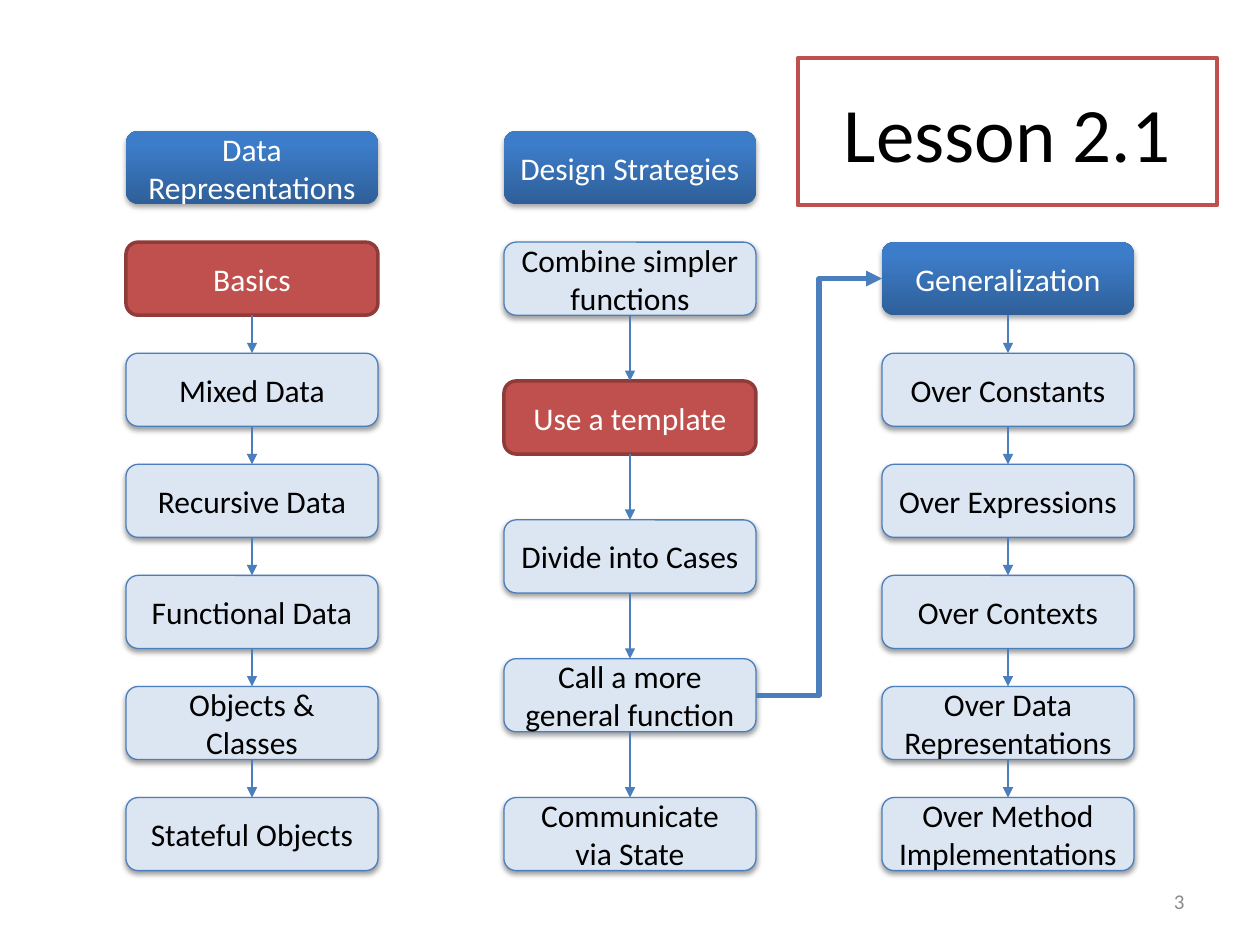
from dataclasses import dataclass

from pptx import Presentation
from pptx.dml.color import RGBColor
from pptx.enum.shapes import MSO_CONNECTOR, MSO_SHAPE
from pptx.enum.text import MSO_ANCHOR, PP_ALIGN
from pptx.oxml.ns import qn
from pptx.oxml.xmlchemy import OxmlElement
from pptx.util import Inches, Pt

ROUNDED = MSO_SHAPE.ROUNDED_RECTANGLE
STRAIGHT, ELBOW = MSO_CONNECTOR.STRAIGHT, MSO_CONNECTOR.ELBOW
CENTER, RIGHT = PP_ALIGN.CENTER, PP_ALIGN.RIGHT
MIDDLE = MSO_ANCHOR.MIDDLE
SITE_TOP, SITE_LEFT, SITE_BOTTOM, SITE_RIGHT = range(4)

WHITE = RGBColor(0xFF, 0xFF, 0xFF)
BLACK = RGBColor(0x00, 0x00, 0x00)
GRAY = RGBColor(0x8C, 0x8C, 0x8C)
BLUE = RGBColor(0x4B, 0x7E, 0xBC)
PALE_BLUE = RGBColor(0xDC, 0xE6, 0xF2)
HEADER_DARK = RGBColor(0x2F, 0x5F, 0x99)
HEADER_LIGHT = RGBColor(0x3C, 0x7C, 0xC8)
RED = RGBColor(0xC0, 0x50, 0x4D)
DARK_RED = RGBColor(0x8E, 0x3B, 0x39)

# Grid in inches: boxes sit in rows 0 to 6
FIRST_TOP, LAST_TOP, LAST_ROW = 1.04, 6.33, 6
ROW_PITCH = (LAST_TOP - FIRST_TOP) / LAST_ROW
BOX_WIDTH, BOX_HEIGHT = 2, 0.58


@dataclass(frozen=True)
class Topic:
    text: str
    style: str = "plain"


@dataclass(frozen=True)
class Column:
    left: float
    header: str
    header_row: int
    first_row: int
    topics: tuple[Topic, ...]
    header_linked: bool = False


COLUMNS = (
    Column(1, "Data Representations", 0, 1, (
        Topic("Basics", "current"), Topic("Mixed Data"),
        Topic("Recursive Data"), Topic("Functional Data"),
        Topic("Objects & Classes"), Topic("Stateful Objects"))),
    Column(4, "Design Strategies", 0, 1, (
        Topic("Combine simpler functions"),
        Topic("Use a template", "current"), Topic("Divide into Cases"),
        Topic("Call a more general function"),
        Topic("Communicate via State"))),
    Column(7, "Generalization", 1, 2, (
        Topic("Over Constants"), Topic("Over Expressions"),
        Topic("Over Contexts"), Topic("Over Data Representations"),
        Topic("Over Method Implementations")), header_linked=True),
)


def write_text(box, text: str, *, size: float = 18, color=BLACK, align=CENTER) -> None:
    frame = box.text_frame
    frame.word_wrap = True
    frame.vertical_anchor = MIDDLE
    para = frame.paragraphs[0]
    para.alignment = align
    span = para.add_run()
    span.text = text
    span.font.name = "Calibri"
    span.font.size = Pt(size)
    span.font.color.rgb = color


def set_line(target, color: RGBColor, width: float) -> None:
    target.line.color.rgb = color
    target.line.width = Pt(width)


def add_shadow(box, opacity: int) -> None:
    shadow = OxmlElement("a:outerShdw")
    for name, value in (("blurRad", Pt(3.1)), ("dist", Pt(1.7)),
                        ("dir", 90 * 60000), ("rotWithShape", 0)):
        shadow.set(name, str(value))
    color = OxmlElement("a:srgbClr")
    color.set("val", str(BLACK))
    alpha = OxmlElement("a:alpha")
    alpha.set("val", str(opacity * 1000))
    color.append(alpha)
    shadow.append(color)
    box._element.spPr.find(qn("a:effectLst")).append(shadow)


def add_box(page, topic: Topic, left: float, row: float):
    box = page.shapes.add_shape(
        ROUNDED, Inches(left), Inches(FIRST_TOP + row * ROW_PITCH),
        Inches(BOX_WIDTH), Inches(BOX_HEIGHT))
    box.shadow.inherit = False
    if topic.style == "header":
        box.fill.gradient()
        box.fill.gradient_angle = 90
        stops = zip(box.fill.gradient_stops, (0, 0.8), (HEADER_DARK, HEADER_LIGHT))
        for stop, position, color in stops:
            stop.position = position
            stop.color.rgb = color
        box.line.fill.background()
        add_shadow(box, 35)
    else:
        current = topic.style == "current"
        box.fill.solid()
        box.fill.fore_color.rgb = RED if current else PALE_BLUE
        set_line(box, DARK_RED if current else BLUE, 2 if current else 0.75)
        if not current:
            add_shadow(box, 38)
    write_text(box, topic.text, color=BLACK if topic.style == "plain" else WHITE)
    return box


def add_arrow(page, start, start_site: int, end, end_site: int, *,
              kind=STRAIGHT, width: float = 0.75) -> None:
    arrow = page.shapes.add_connector(kind, 0, 0, 0, 0)
    arrow.begin_connect(start, start_site)
    arrow.end_connect(end, end_site)
    set_line(arrow, BLUE, width)
    head = OxmlElement("a:tailEnd")
    head.set("type", "triangle")
    arrow.line._get_or_add_ln().append(head)
    arrow._element.spPr.append(OxmlElement("a:effectLst"))


def add_column(page, column: Column) -> dict:
    header = add_box(page, Topic(column.header, "header"), column.left, column.header_row)
    step = (LAST_ROW - column.first_row) / (len(column.topics) - 1)
    boxes = [add_box(page, topic, column.left, column.first_row + index * step)
             for index, topic in enumerate(column.topics)]
    chain = [header, *boxes] if column.header_linked else boxes
    for upper, lower in zip(chain, chain[1:]):
        add_arrow(page, upper, SITE_BOTTOM, lower, SITE_TOP)
    return {box.text_frame.text: box for box in (header, *boxes)}


def format_title(title, text: str) -> None:
    title.left, title.top = Inches(6.33), Inches(0.46)
    title.width, title.height = Inches(3.33), Inches(1.17)
    outline = OxmlElement("a:prstGeom")
    outline.set("prst", "roundRect")
    outline.append(OxmlElement("a:avLst"))
    title._element.spPr.append(outline)
    set_line(title, RED, 2.25)
    write_text(title, text, size=44)


def main() -> None:
    deck = Presentation()
    deck.slide_width, deck.slide_height = Inches(10), Inches(7.5)
    page = deck.slides.add_slide(deck.slide_layouts.get_by_name("Title Only"))
    format_title(page.shapes.title, "Lesson 2.1")

    # Three chains of topics
    boxes = {}
    for column in COLUMNS:
        boxes.update(add_column(page, column))

    # Link from strategies to generalization
    add_arrow(page, boxes["Call a more general function"], SITE_RIGHT,
              boxes["Generalization"], SITE_LEFT, kind=ELBOW, width=3)

    # Page number
    number = page.shapes.add_textbox(Inches(7.17), Inches(6.95), Inches(2.33), Inches(0.4))
    write_text(number, "3", size=12, color=GRAY, align=RIGHT)

    deck.save("out.pptx")


if __name__ == "__main__":
    main()
